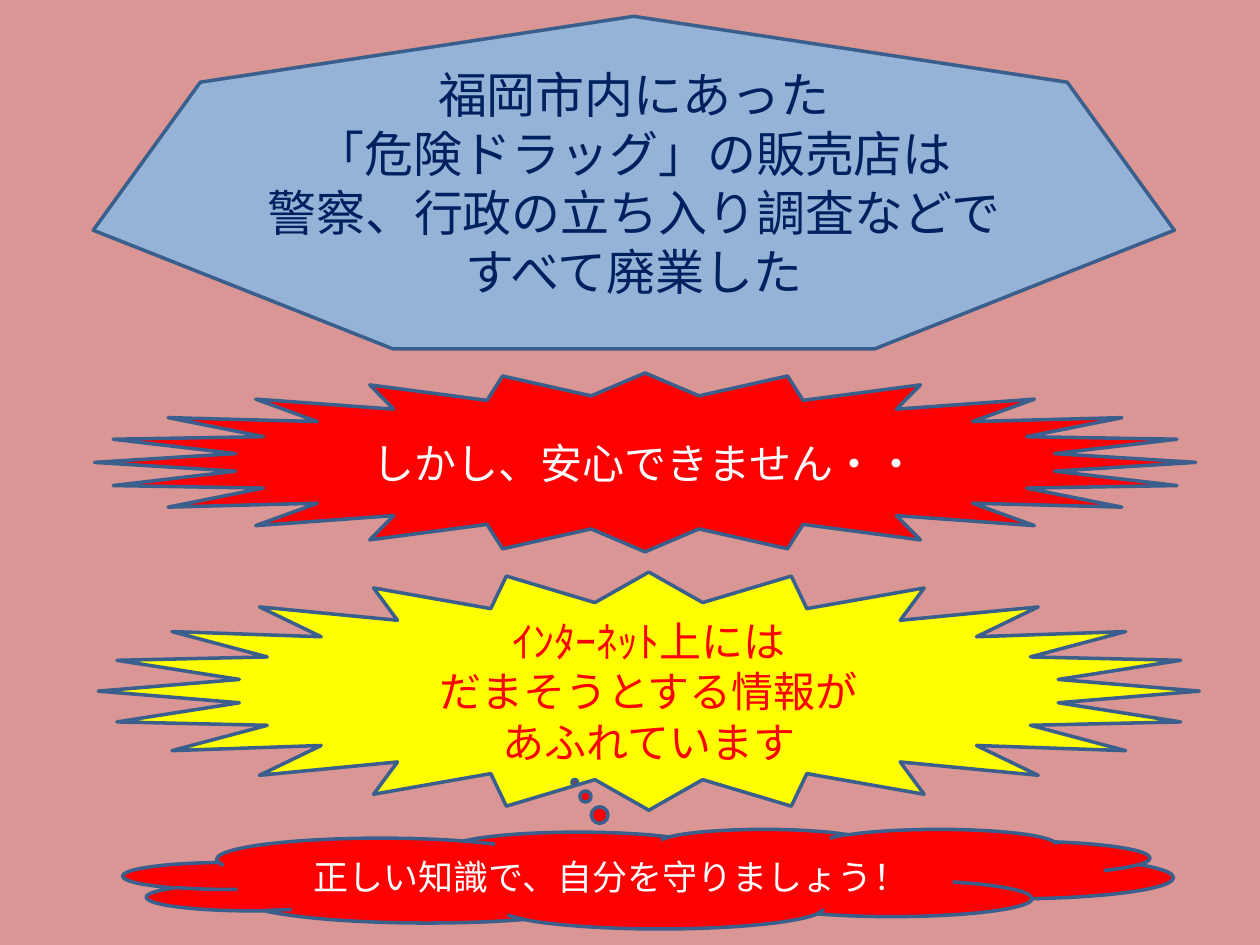
from dataclasses import dataclass

from lxml import etree
from pptx import Presentation
from pptx.dml.color import RGBColor
from pptx.enum.shapes import MSO_SHAPE
from pptx.enum.text import MSO_ANCHOR, PP_ALIGN
from pptx.oxml.ns import qn
from pptx.util import Inches, Pt

HEPTAGON = MSO_SHAPE.HEPTAGON
STAR = MSO_SHAPE.STAR_24_POINT
CLOUD = MSO_SHAPE.CLOUD_CALLOUT
MIDDLE = MSO_ANCHOR.MIDDLE
CENTER = PP_ALIGN.CENTER


@dataclass(frozen=True)
class Theme:
    font: str = "Noto Sans CJK JP"
    background: str = "D99694"
    outline: str = "3A5F8C"
    blue: str = "95B3D7"
    navy: str = "002060"
    red: str = "FF0000"
    yellow: str = "FFFF00"
    white: str = "FFFFFF"
    headline: int = 28
    warning: int = 24
    advice: int = 20
    outline_width: int = 2


THEME = Theme()


def paint(fill, color):
    fill.solid()
    fill.fore_color.rgb = RGBColor.from_string(color)


def write_lines(frame, lines, size, color):
    frame.word_wrap = True
    frame.vertical_anchor = MIDDLE
    for index, line in enumerate(lines):
        paragraph = frame.add_paragraph() if index else frame.paragraphs[0]
        paragraph.alignment = CENTER
        run = paragraph.add_run()
        run.text = line
        run.font.size = Pt(size)
        run.font.name = THEME.font
        paint(run.font.fill, color)
        east_asian = etree.SubElement(run.font._element, qn("a:ea"))
        east_asian.set("typeface", THEME.font)


def add_message(slide, outline, box, fill, lines, size, color):
    message = slide.shapes.add_shape(outline, *map(Inches, box))
    message.shadow.inherit = False
    paint(message.fill, fill)
    paint(message.line.fill, THEME.outline)
    message.line.width = Pt(THEME.outline_width)
    write_lines(message.text_frame, lines, size, color)
    return message


def main():
    deck = Presentation()
    deck.slide_width, deck.slide_height = Inches(10), Inches(7.5)
    slide = deck.slides.add_slide(deck.slide_layouts[6])
    paint(slide.background.fill, THEME.background)

    add_message(
        slide, HEPTAGON, (0.74, 0.13, 8.58, 2.64), THEME.blue,
        ["福岡市内にあった", "「危険ドラッグ」の販売店は",
         "警察、行政の立ち入り調査などで", "すべて廃業した"],
        THEME.headline, THEME.navy)
    add_message(
        slide, STAR, (0.75, 2.96, 8.74, 1.42), THEME.red,
        ["しかし、安心できません・・"], THEME.warning, THEME.white)
    add_message(
        slide, STAR, (0.78, 4.54, 8.74, 1.89), THEME.yellow,
        ["ｲﾝﾀｰﾈｯﾄ上には", "だまそうとする情報が", "あふれています"],
        THEME.warning, THEME.red)
    advice = add_message(
        slide, CLOUD, (0.98, 6.58, 8.33, 0.79), THEME.red,
        ["正しい知識で、自分を守りましょう！"], THEME.advice, THEME.white)
    advice.adjustments[0] = -0.07
    advice.adjustments[1] = -0.97

    deck.save("out.pptx")


if __name__ == "__main__":
    main()
